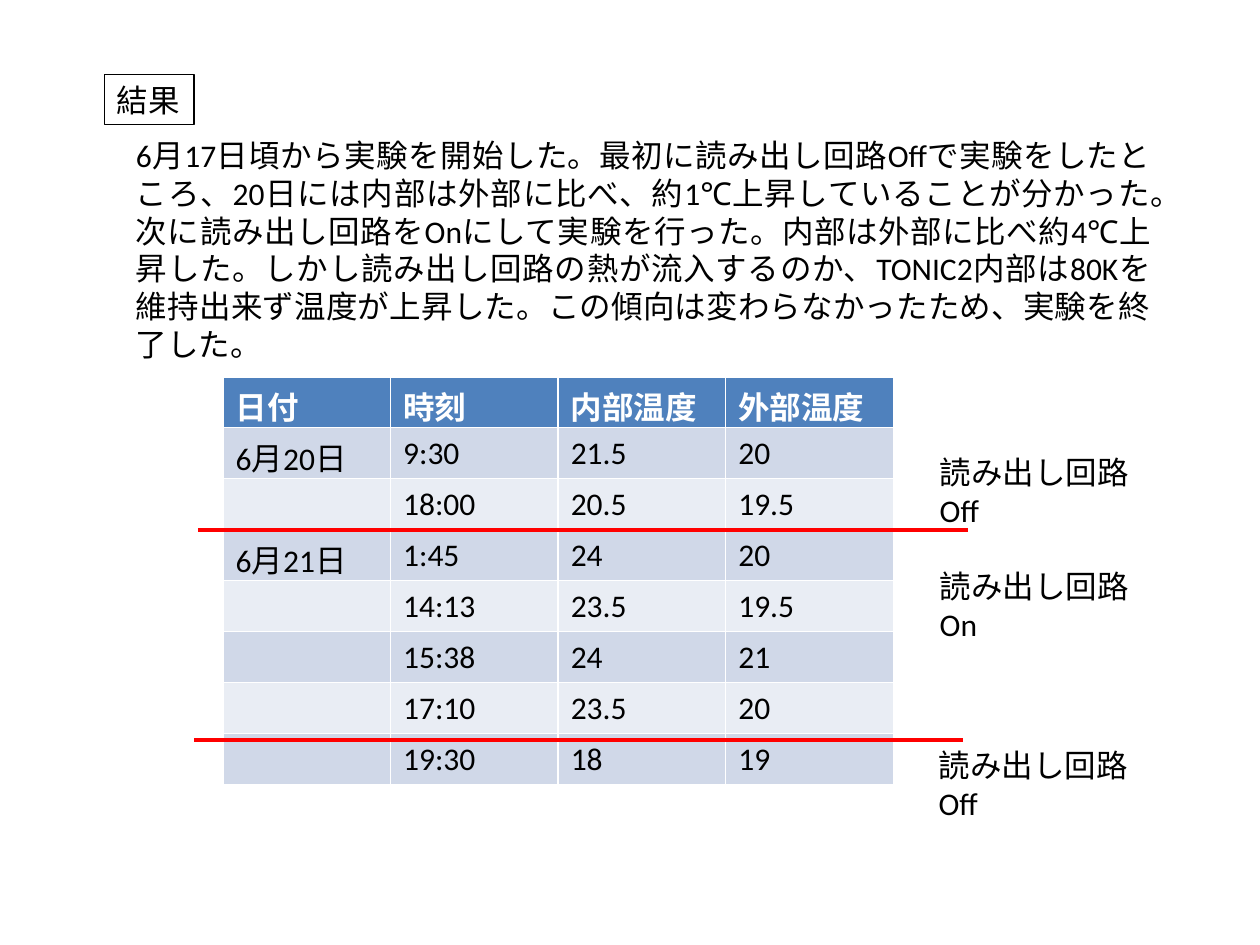
import pptx
import pptx.dml.color
import pptx.enum.shapes
import pptx.enum.text
import pptx.oxml.ns
import pptx.util
from lxml import etree

Inches = pptx.util.Inches
Pt = pptx.util.Pt

COLORS = {
    "text": "000000",
    "header": "4F81BD",
    "header_text": "FFFFFF",
    "band_dark": "D0D8E8",
    "band_light": "E9EDF4",
    "divider": "FF0000",
}
FONT = {"name": "Calibri", "size": Pt(18), "bold": False}

BODY = (
    "6月17日頃から実験を開始した。最初に読み出し回路Offで実験をしたところ、"
    "20日には内部は外部に比べ、約1℃上昇していることが分かった。"
    "次に読み出し回路をOnにして実験を行った。内部は外部に比べ約4℃上昇した。"
    "しかし読み出し回路の熱が流入するのか、TONIC2内部は80Kを維持出来ず温度が上昇した。"
    "この傾向は変わらなかったため、実験を終了した。"
)
READINGS = [
    ("日付", "時刻", "内部温度", "外部温度"),
    ("6月20日", "9:30", "21.5", "20"),
    ("", "18:00", "20.5", "19.5"),
    ("6月21日", "1:45", "24", "20"),
    ("", "14:13", "23.5", "19.5"),
    ("", "15:38", "24", "21"),
    ("", "17:10", "23.5", "20"),
    ("", "19:30", "18", "19"),
]
# Circuit state, left, top, width
STATES = [("Off", 7.36, 3.55, 1.98), ("On", 7.36, 4.45, 1.96), ("Off", 7.35, 5.87, 1.98)]
# Left, right, height on the slide
DIVIDERS = [(1.57, 7.68, 4.21), (1.54, 7.64, 5.87)]


def rgb(name):
    return pptx.dml.color.RGBColor.from_string(COLORS[name])


def format_font(font, color="text", **changes):
    for attribute, value in {**FONT, **changes}.items():
        setattr(font, attribute, value)
    font.color.rgb = rgb(color)


def add_text(slide, text, left, top, width, height, wrap=False, align=None):
    shape = slide.shapes.add_textbox(Inches(left), Inches(top), Inches(width), Inches(height))
    frame = shape.text_frame
    frame.word_wrap = wrap
    frame.auto_size = pptx.enum.text.MSO_AUTO_SIZE.SHAPE_TO_FIT_TEXT
    paragraph = frame.paragraphs[0]
    paragraph.alignment = align
    run = paragraph.add_run()
    run.text = text
    format_font(run.font)
    return shape


def add_readings_table(slide, left, top, column_width, row_height):
    rows, columns = len(READINGS), len(READINGS[0])
    table = slide.shapes.add_table(
        rows, columns, Inches(left), Inches(top),
        Inches(columns * column_width), Inches(rows * row_height),
    ).table
    for column in table.columns:
        column.width = Inches(column_width)
    for row_index, values in enumerate(READINGS):
        table.rows[row_index].height = Inches(row_height)
        is_header = row_index == 0
        band = "band_dark" if row_index % 2 else "band_light"
        for column_index, value in enumerate(values):
            cell = table.cell(row_index, column_index)
            cell.fill.solid()
            cell.fill.fore_color.rgb = rgb("header" if is_header else band)
            if value:
                run = cell.text_frame.paragraphs[0].add_run()
                run.text = value
                format_font(run.font, "header_text" if is_header else "text", bold=is_header)


def add_divider(slide, left, right, height):
    line = slide.shapes.add_connector(
        pptx.enum.shapes.MSO_CONNECTOR.STRAIGHT,
        Inches(left), Inches(height), Inches(right), Inches(height),
    )
    line.line.color.rgb = rgb("divider")
    line.line.width = Pt(2.25)
    properties = line._element.spPr
    etree.SubElement(properties, pptx.oxml.ns.qn("a:effectLst"))


def main():
    presentation = pptx.Presentation()
    presentation.slide_width = Inches(10)
    presentation.slide_height = Inches(7.5)
    slide = presentation.slides.add_slide(presentation.slide_layouts[6])

    # Framed heading
    heading = add_text(slide, "結果", 0.83, 0.59, 0.71, 0.4)
    heading.line.color.rgb = rgb("text")
    heading.line.width = Pt(0.75)

    # Temperature readings
    add_readings_table(slide, 1.77, 2.99, 1.33, 0.405)

    # Dividers between circuit states, and their labels
    for divider in DIVIDERS:
        add_divider(slide, *divider)
    for state, left, top, width in STATES:
        add_text(slide, "読み出し回路" + state, left, top, width, 0.4)

    # Description of the experiment
    add_text(slide, BODY, 0.98, 1.03, 8.25, 1.62, wrap=True,
             align=pptx.enum.text.PP_ALIGN.JUSTIFY)

    presentation.save("out.pptx")


if __name__ == "__main__":
    main()
